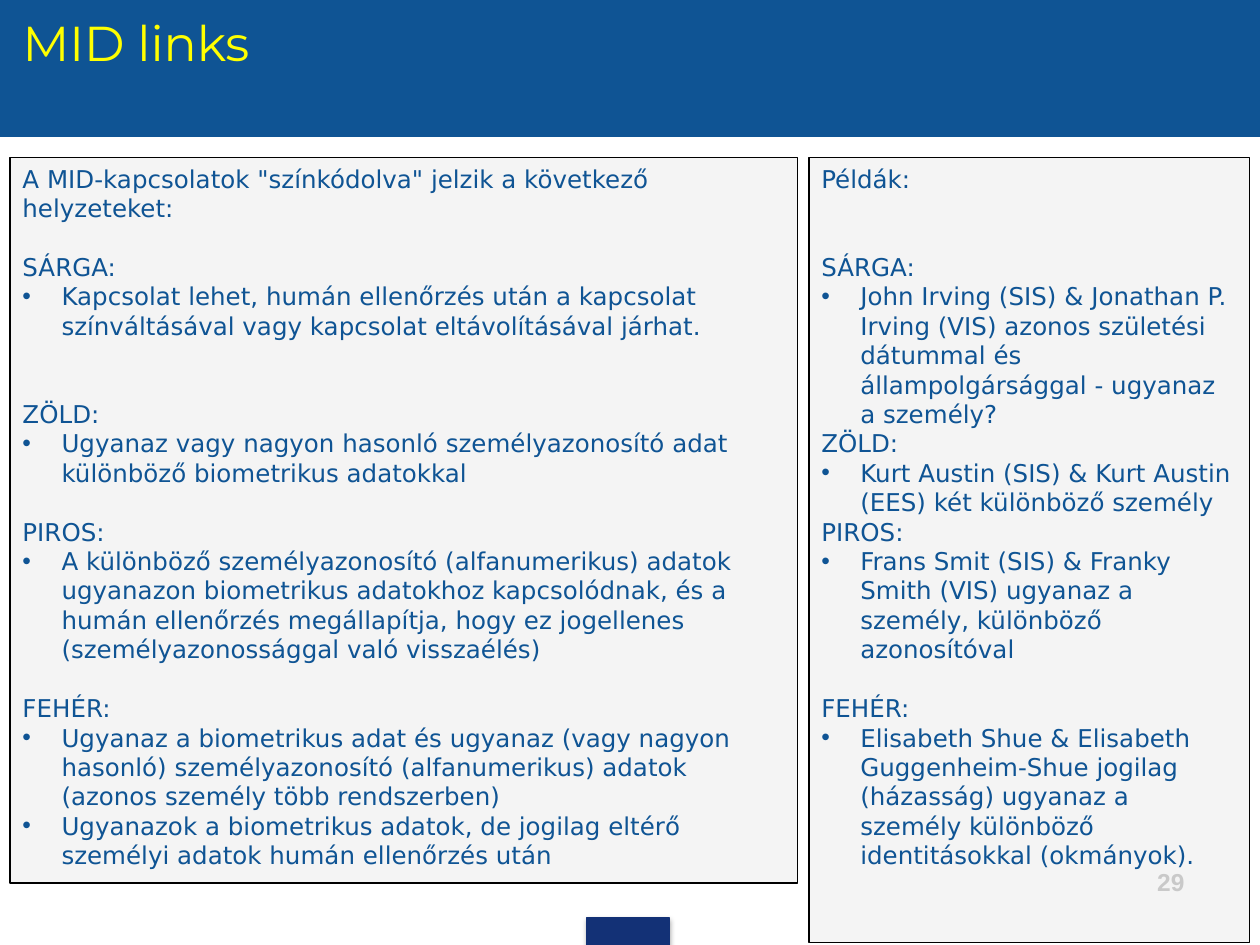
"""Build the slide on colour-coded MID links with Hungarian examples."""
import pptx
import pptx.dml.color
import pptx.enum.shapes
import pptx.enum.text
import pptx.oxml
import pptx.oxml.ns
import pptx.util

Inches = pptx.util.Inches
Pt = pptx.util.Pt
RGBColor = pptx.dml.color.RGBColor
BLUE = RGBColor(0x0F, 0x54, 0x94)
NAVY = RGBColor(0x13, 0x31, 0x76)
GREY = RGBColor(0xF2, 0xF2, 0xF2)
BLACK = RGBColor(0x00, 0x00, 0x00)
YELLOW = RGBColor(0xFF, 0xFF, 0x00)
LINE_HEIGHT = 16.8
NAMESPACE = pptx.oxml.ns.nsdecls("a")

BODY_FONT = {"name": "DejaVu Sans", "size": Pt(14)}
TITLE_FONT = {"name": "Montserrat", "size": Pt(28), "bold": False}
NUMBER_FONT = {"name": "Arial", "size": Pt(14), "bold": True}
FRAME_FORMAT = {
    "word_wrap": True,
    "auto_size": pptx.enum.text.MSO_AUTO_SIZE.NONE,
    "vertical_anchor": pptx.enum.text.MSO_ANCHOR.TOP,
    "margin_left": Inches(0.1),
    "margin_right": Inches(0.1),
    "margin_top": Inches(0.05),
    "margin_bottom": Inches(0.05),
}

# Each section: heading, blank lines above it, bullets
SITUATIONS = [
    ('A MID-kapcsolatok "színkódolva" jelzik a következő helyzeteket:', 0, []),
    ("SÁRGA:", 1, ["Kapcsolat lehet, humán ellenőrzés után a kapcsolat színváltásával "
                   "vagy kapcsolat eltávolításával járhat."]),
    ("ZÖLD:", 2, ["Ugyanaz vagy nagyon hasonló személyazonosító adat különböző "
                  "biometrikus adatokkal"]),
    ("PIROS:", 1, ["A különböző személyazonosító (alfanumerikus) adatok ugyanazon "
                   "biometrikus adatokhoz kapcsolódnak, és a humán ellenőrzés megállapítja, "
                   "hogy ez jogellenes (személyazonossággal való visszaélés)"]),
    ("FEHÉR:", 1, ["Ugyanaz a biometrikus adat és ugyanaz (vagy nagyon hasonló) "
                   "személyazonosító (alfanumerikus) adatok (azonos személy több rendszerben)",
                   "Ugyanazok a biometrikus adatok, de jogilag eltérő személyi adatok "
                   "humán ellenőrzés után"]),
]
EXAMPLES = [
    ("Példák:", 0, []),
    ("SÁRGA:", 2, ["John Irving (SIS) & Jonathan P. Irving (VIS) azonos születési dátummal "
                   "és állampolgársággal - ugyanaz a személy?"]),
    ("ZÖLD:", 0, ["Kurt Austin (SIS) & Kurt Austin (EES) két különböző személy"]),
    ("PIROS:", 0, ["Frans Smit (SIS) & Franky Smith (VIS) ugyanaz a személy, "
                   "különböző azonosítóval"]),
    ("FEHÉR:", 1, ["Elisabeth Shue & Elisabeth Guggenheim-Shue jogilag (házasság) ugyanaz "
                   "a személy különböző identitásokkal (okmányok)."]),
]


def add_box(slide, place, fill, line):
    box = slide.shapes.add_shape(
        pptx.enum.shapes.MSO_SHAPE.RECTANGLE, *[Inches(length) for length in place])
    box.shadow.inherit = False
    box.fill.solid()
    box.fill.fore_color.rgb = fill
    box.line.color.rgb = line
    box.line.width = Pt(0.75)
    return box


def format_text(para, text, font, color):
    span = para.add_run()
    span.text = text
    for name, value in font.items():
        setattr(span.font, name, value)
    span.font.color.rgb = color


deck = pptx.Presentation()
deck.slide_width = Inches(10)
deck.slide_height = Inches(7.5)
slide = deck.slides.add_slide(deck.slide_layouts[5])

add_box(slide, (0, 0, 10, 1.08), BLUE, BLUE)
tab = add_box(slide, (4.66, 7.28, 0.65, 0.22), NAVY, NAVY)
effects = tab._element.spPr.find(pptx.oxml.ns.qn("a:effectLst"))
effects.append(pptx.oxml.parse_xml(
    f'<a:outerShdw {NAMESPACE} blurRad="{Pt(3.1)}" dist="{Pt(1.8)}" dir="5400000" '
    'rotWithShape="0"><a:srgbClr val="000000"><a:alpha val="35000"/></a:srgbClr>'
    '</a:outerShdw>'))

number = slide.shapes.add_textbox(Inches(7.17), Inches(6.83), Inches(2.33), Inches(0.52))
for name, value in FRAME_FORMAT.items():
    setattr(number.text_frame, name, value)
para = number.text_frame.paragraphs[0]
para.alignment = pptx.enum.text.PP_ALIGN.RIGHT
format_text(para, "29", NUMBER_FONT, BLACK)

for place, sections in [((0.08, 1.25, 6.25, 5.76), SITUATIONS),
                        ((6.42, 1.25, 3.5, 6.23), EXAMPLES)]:
    box = add_box(slide, place, GREY, BLACK)
    color = box._element.spPr.find(".//" + pptx.oxml.ns.qn("a:srgbClr"))
    color.append(pptx.oxml.parse_xml(f'<a:alpha {NAMESPACE} val="83000"/>'))
    frame = box.text_frame
    for name, value in FRAME_FORMAT.items():
        setattr(frame, name, value)
    for index, (heading, blank_lines, bullets) in enumerate(sections):
        para = frame.add_paragraph() if index else frame.paragraphs[0]
        para.alignment = pptx.enum.text.PP_ALIGN.LEFT
        if blank_lines:
            para.space_before = Pt(blank_lines * LINE_HEIGHT)
        format_text(para, heading, BODY_FONT, BLUE)
        for bullet in bullets:
            para = frame.add_paragraph()
            para.alignment = pptx.enum.text.PP_ALIGN.LEFT
            properties = para._p.get_or_add_pPr()
            properties.set("marL", str(Inches(0.31)))
            properties.set("indent", str(-Inches(0.31)))
            for tag in ('buFont typeface="Arial"', 'buChar char="•"'):
                properties.append(pptx.oxml.parse_xml(f"<a:{tag} {NAMESPACE}/>"))
            format_text(para, bullet, BODY_FONT, BLUE)

title = slide.shapes.title
for name, value in {"left": 0.08, "top": 0.05, "width": 9.17, "height": 1.02}.items():
    setattr(title, name, Inches(value))
for name, value in FRAME_FORMAT.items():
    setattr(title.text_frame, name, value)
para = title.text_frame.paragraphs[0]
para.alignment = pptx.enum.text.PP_ALIGN.LEFT
format_text(para, "MID links", TITLE_FONT, YELLOW)
slide.shapes._spTree.append(title._element)

deck.save("out.pptx")
